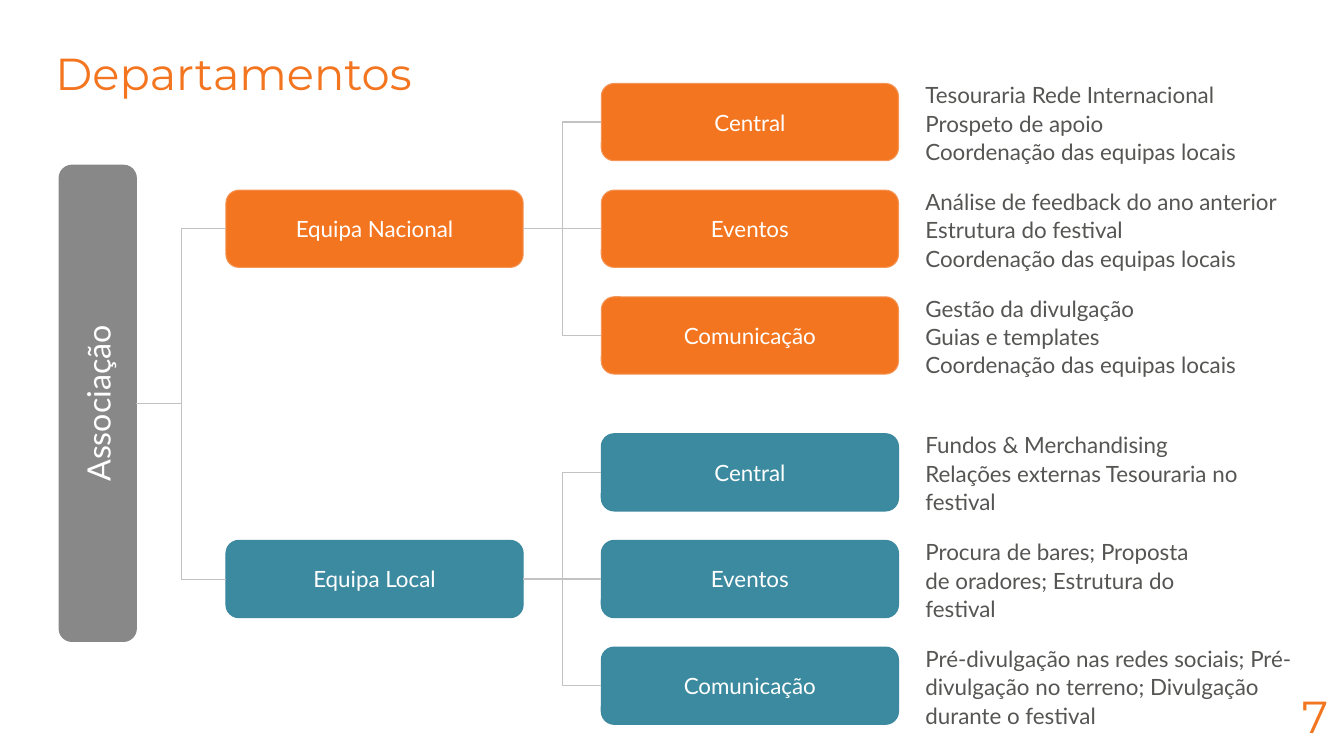
from pptx import Presentation
from pptx.dml.color import RGBColor
from pptx.enum.shapes import MSO_CONNECTOR, MSO_SHAPE
from pptx.enum.text import MSO_ANCHOR, PP_ALIGN
from pptx.oxml.ns import qn
from pptx.util import Pt
from lxml.etree import SubElement

ORANGE, GREY, WHITE = "F3751F", "888888", "FFFFFF"
LINE_GREY, TEXT_GREY = "C2C2C2", "555554"
TITLE_FONT, BODY_FONT = "Montserrat", "Lato"

TITLE = "Departamentos"
PAGE_NUMBER = "7"
ASSOCIATION = "Associação"
DEPARTMENTS = ["Central", "Eventos", "Comunicação"]

# Each team: name, fill, outline, top of its first department, duties per department
TEAMS = [
    ("Equipa Nacional", ORANGE, "F49556", 59.6, [
        ["Tesouraria Rede Internacional", "Prospeto de apoio",
         "Coordenação das equipas locais"],
        ["Análise de feedback do ano anterior", "Estrutura do festival",
         "Coordenação das equipas locais"],
        ["Gestão da divulgação", "Guias e templates",
         "Coordenação das equipas locais"],
    ]),
    ("Equipa Local", "3B8A9F", "3B889F", 309.8, [
        ["Fundos & Merchandising", "Relações externas Tesouraria no", "festival"],
        ["Procura de bares; Proposta", "de oradores; Estrutura do", "festival"],
        ["Pré-divulgação nas redes sociais; Pré-", "divulgação no terreno; Divulgação",
         "durante o festival"],
    ]),
]

BOX_WIDTH, BOX_HEIGHT, ROW_PITCH = 212.3, 55.2, 76.2
ASSOCIATION_LEFT, TEAM_LEFT, DEPARTMENT_LEFT, DUTIES_LEFT = 42.2, 161.4, 429.5, 661
ASSOCIATION_TOP, ASSOCIATION_HEIGHT = 118, 340.2
RIGHT, LEFT = 3, 1


def color(hex_text):
    return RGBColor.from_string(hex_text)


def set_font(para, name, size, hex_text):
    para.font.name = name
    para.font.size = Pt(size)
    para.font.color.rgb = color(hex_text)


def add_box(page, text, left, top, width, height, fill, outline, size=16):
    box = page.shapes.add_shape(MSO_SHAPE.ROUNDED_RECTANGLE,
                                Pt(left), Pt(top), Pt(width), Pt(height))
    box.shadow.inherit = False
    box.fill.solid()
    box.fill.fore_color.rgb = color(fill)
    box.line.color.rgb = color(outline)
    box.line.width = Pt(0.75)
    frame = box.text_frame
    frame.margin_left = frame.margin_right = frame.margin_top = frame.margin_bottom = 0
    frame.vertical_anchor = MSO_ANCHOR.MIDDLE
    para = frame.paragraphs[0]
    para.text = text
    para.alignment = PP_ALIGN.CENTER
    set_font(para, BODY_FONT, size, WHITE)
    return box


def add_text(page, texts, left, top, width, height, font, size, hex_text,
             line_spacing=1.0, gap=0):
    """Add a text box with one paragraph per text and a gap between paragraphs."""
    box = page.shapes.add_textbox(Pt(left), Pt(top), Pt(width), Pt(height))
    frame = box.text_frame
    frame.word_wrap = True
    frame.margin_left = frame.margin_right = frame.margin_bottom = 0
    frame.margin_top = Pt(1)
    for index, text in enumerate(texts):
        para = frame.add_paragraph() if index else frame.paragraphs[0]
        para.text = text
        para.line_spacing = line_spacing
        if index:
            para.space_before = Pt(gap)
        set_font(para, font, size, hex_text)


def join(page, parent, child):
    """Link the right side of the parent to the left side of the child."""
    level = parent.top + parent.height // 2 == child.top + child.height // 2
    kind = MSO_CONNECTOR.STRAIGHT if level else MSO_CONNECTOR.ELBOW
    link = page.shapes.add_connector(kind, 0, 0, 0, 0)
    link.begin_connect(parent, RIGHT)
    link.end_connect(child, LEFT)
    link.line.color.rgb = color(LINE_GREY)
    link.line.width = Pt(0.75)
    SubElement(link._element.spPr, qn("a:effectLst"))


def main():
    deck = Presentation()
    deck.slide_width, deck.slide_height = Pt(960), Pt(540)
    page = deck.slides.add_slide(deck.slide_layouts[6])

    add_text(page, [TITLE], 39.6, 31.7, 281, 40, TITLE_FONT, 32, ORANGE)
    association = add_box(page, ASSOCIATION, ASSOCIATION_LEFT, ASSOCIATION_TOP,
                          BOX_HEIGHT, ASSOCIATION_HEIGHT, GREY, GREY, size=23)
    association.text_frame._txBody.bodyPr.set("vert", "vert270")

    for name, fill, outline, top, duties in TEAMS:
        team = add_box(page, name, TEAM_LEFT, top + ROW_PITCH,
                       BOX_WIDTH, BOX_HEIGHT, fill, outline)
        join(page, association, team)
        for row, department_name in enumerate(DEPARTMENTS):
            department = add_box(page, department_name, DEPARTMENT_LEFT,
                                 top + row * ROW_PITCH, BOX_WIDTH, BOX_HEIGHT,
                                 fill, outline)
            join(page, team, department)
        add_text(page, ["\v".join(lines) for lines in duties], DUTIES_LEFT, top - 3.6,
                 281, 216, BODY_FONT, 16, TEXT_GREY, line_spacing=1.06, gap=15.2)

    add_text(page, [PAGE_NUMBER], 930, 491, 20, 40, TITLE_FONT, 32, ORANGE)
    deck.save("out.pptx")


if __name__ == "__main__":
    main()
